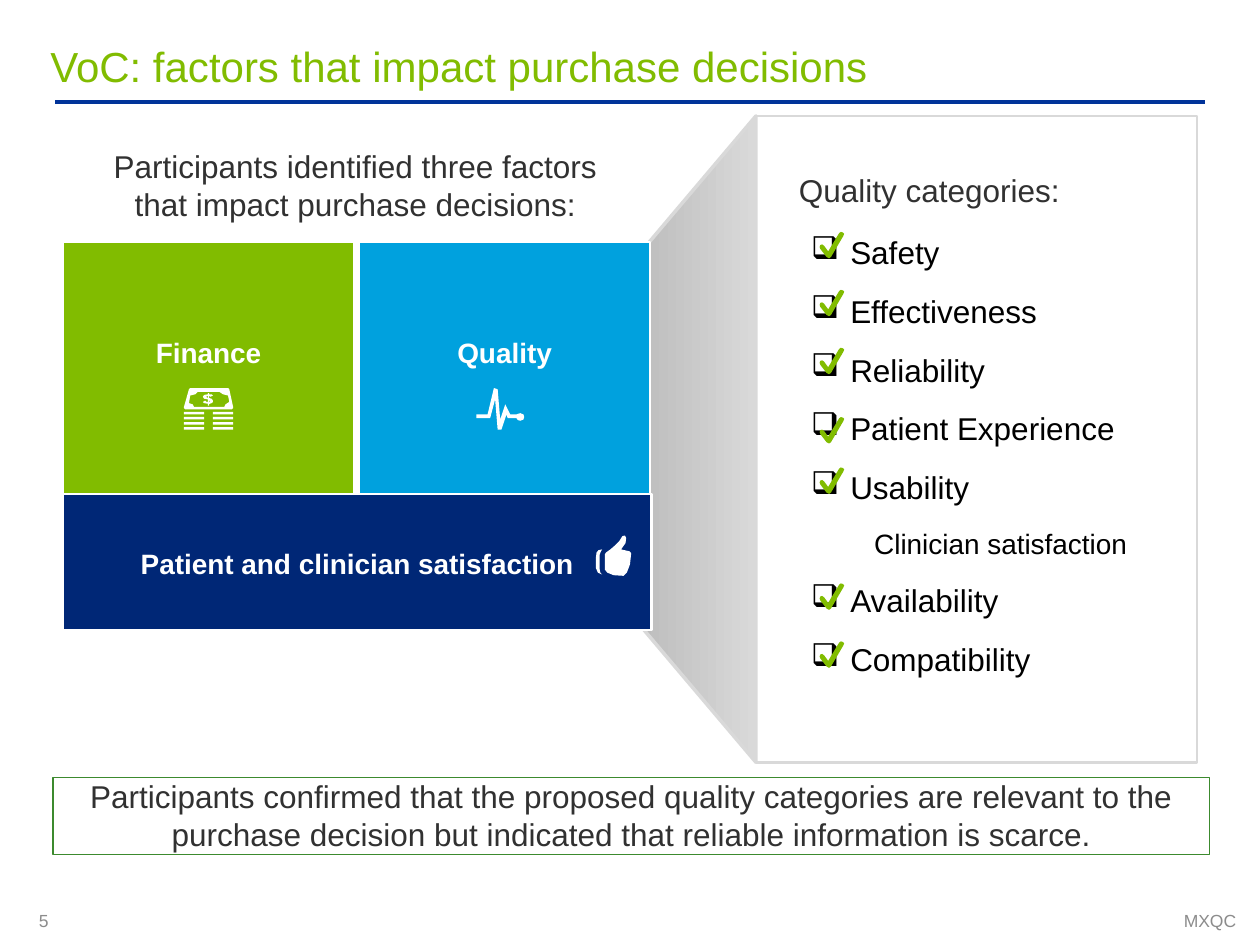
from copy import deepcopy
from lxml.etree import SubElement
from pptx import Presentation
from pptx.dml.color import RGBColor
from pptx.enum.shapes import MSO_CONNECTOR as Conn, MSO_SHAPE as Kind
from pptx.enum.text import MSO_ANCHOR as Anchor, PP_ALIGN as Align
from pptx.oxml.ns import qn
from pptx.util import Inches, Pt

HEX = {"green": "81BC00", "blue": "00A1DE", "navy": "002776", "rule": "003399",
       "frame": "3C8A2E", "text": "313131", "black": "000000", "white": "FFFFFF",
       "foot": "8C8C8C", "dark": "808080", "mid": "B7B7B7", "pale": "D9D9D9"}
RGB = {name: RGBColor.from_string(code) for name, code in HEX.items()}

deck = Presentation()
deck.slide_width, deck.slide_height = Inches(10), Inches(7.5)
slide = deck.slides.add_slide(deck.slide_layouts[6])
shapes = slide.shapes


def write(shape, lines, size, color, align=Align.LEFT, anchor=Anchor.TOP,
          inset=(0, 0, 0, 0), wrap=True):
    """Fill a shape with paragraphs that share one style."""
    frame = shape.text_frame
    frame.text = "\n".join(lines)
    frame.word_wrap = wrap
    frame.vertical_anchor = anchor
    (frame.margin_left, frame.margin_top,
     frame.margin_right, frame.margin_bottom) = map(Inches, inset)
    for para in frame.paragraphs:
        para.alignment = align
        para.font.name, para.font.size = "Arial", Pt(size)
        para.font.color.rgb = RGB[color]
    return frame.paragraphs


def draw(left, top, color, outlines):
    """Draw closed outlines, given in hundredths of an inch from left, top."""
    build = None
    for outline in outlines:
        pts = [(Inches(left + x / 100), Inches(top + y / 100)) for x, y in outline]
        if build is None:
            build = shapes.build_freeform(*pts[0])
        else:
            build.move_to(*pts[0])
        build.add_line_segments(pts[1:], close=True)
    icon = build.convert_to_shape()
    icon.shadow.inherit = False
    icon.fill.solid()
    icon.fill.fore_color.rgb = RGB[color]
    icon.line.fill.background()


# Footer and title rule
foot = shapes.add_textbox(Inches(6.83), Inches(7.22), Inches(2.98), Inches(0.17))
write(foot, ["MXQC"], 10, "foot", Align.RIGHT, Anchor.MIDDLE)
page = shapes.add_textbox(Inches(0.21), Inches(7.17), Inches(0.37), Inches(0.27))
write(page, ["5"], 10, "foot", anchor=Anchor.MIDDLE, inset=(0.1, 0.05, 0.1, 0.05), wrap=False)
rule = shapes.add_connector(Conn.STRAIGHT, Inches(0.44), Inches(0.81), Inches(9.56), Inches(0.81))
rule.line.color.rgb, rule.line.width = RGB["rule"], Pt(2.25)
SubElement(rule._element.spPr, qn("a:effectLst"))

# Grey wedge that opens towards the panel
wedge = shapes.add_shape(Kind.ISOSCELES_TRIANGLE, Inches(2.35), Inches(2.4), Inches(5.13), Inches(2.17))
wedge.rotation = 270
wedge.shadow.inherit = False
wedge.line.color.rgb, wedge.line.width = RGB["pale"], Pt(2)
wedge.fill.gradient()
wedge.fill.gradient_angle = 270
first = wedge.fill._fill._gradFill.gsLst[0]
first.addnext(deepcopy(first))
for stop, (pos, tone) in zip(wedge.fill.gradient_stops, [(0, "dark"), (0.5, "mid"), (1, "pale")]):
    stop.position = pos
    stop.color.rgb = RGB[tone]

# Title
title = shapes.add_textbox(Inches(0.4), Inches(0.32), Inches(9.2), Inches(0.68))
write(title, ["VoC: factors that impact purchase decisions"], 24, "green")

# Three factor tiles; the upper two leave room for an icon below the text
tiles = [("Finance", 0.5, 1.92, 2.31, 2.01, "green", 0.37),
         ("Quality", 2.85, 1.92, 2.31, 2.01, "blue", 0.37),
         ("Patient and clinician satisfaction", 0.5, 3.92, 4.67, 1.08, "navy", 0.1)]
for label, x, y, w, h, color, room in tiles:
    tile = shapes.add_shape(Kind.RECTANGLE, Inches(x), Inches(y), Inches(w), Inches(h))
    tile.shadow.inherit = False
    tile.fill.solid()
    tile.fill.fore_color.rgb = RGB[color]
    tile.line.color.rgb, tile.line.width = RGB["white"], Pt(1.5)
    para = write(tile, [label], 16, "white", Align.CENTER, Anchor.MIDDLE, (0.1, 0.1, 0.1, room))[0]
    para.font.bold = True
    para.line_spacing = 1.06

# Money icon: stacked notes under a bill with a dollar sign
notes = [[(x, y), (x + 16, y), (x + 16, y + 2), (x, y + 2)]
         for y in range(19, 32, 4) for x in (0, 23)]
bill = [(5, 0), (35, 0), (36, 1), (39, 15), (39, 16), (38, 17), (1, 17), (0, 16), (0, 15), (4, 1)]
field = [(11, 3), (9, 5), (5, 6), (4, 12), (7, 13), (8, 15), (32, 15), (33, 13),
         (36, 11), (35, 6), (31, 5), (28, 3)]
dollar = [(19, 4), (20, 4), (20, 5), (22, 5), (23, 6), (21, 7), (20, 6), (20, 8), (22, 8.5),
          (23, 10), (23, 11), (22, 12), (20, 12.7), (20, 14), (19, 14), (19, 12.5), (16, 12),
          (15, 11), (17, 10), (18, 11), (19, 11), (19, 9), (16, 8.5), (15, 7), (16, 5.5), (19, 5)]
gaps = [[(20, 10), (21.3, 10.5), (20, 11)], [(19, 6), (17.5, 7), (19, 8)]]
draw(1.46, 3.08, "white", notes + [bill, field, dollar] + gaps)

# Thumb icon
thumb = [(20, 12), (23.5, 7), (24, 3), (23, 1), (21, 1.5), (18.5, 5.5), (15, 9), (11.5, 12),
         (8, 14.5), (7, 16), (7, 28), (9, 30.5), (14, 32.5), (22, 33), (24.5, 30.5), (27, 24),
         (28, 15), (26.5, 13.5), (22, 12.5)]
cuff = [(5, 12), (2, 12.7), (0.5, 14.5), (0, 18), (0, 27), (1.5, 30.5), (5, 32), (3.5, 30.5),
        (3, 28), (3, 16), (4, 13.5)]
draw(4.73, 4.24, "white", [thumb, cuff])

# Pulse icon
pulse = [(35, 20), (33, 20.5), (32, 21), (27, 21), (23, 13), (19, 25), (17, 1), (14, 0), (9, 21),
         (0, 21), (0, 24), (11, 24), (15, 9), (17, 33), (20, 33), (24, 21), (25, 24), (32, 24),
         (33, 25.5), (35, 26), (37.5, 25), (38, 23), (37.5, 21)]
draw(3.78, 3.08, "white", [pulse])

# Lead-in
lead = shapes.add_textbox(Inches(0.73), Inches(1.17), Inches(4.18), Inches(0.61))
write(lead, ["Participants identified three factors that impact purchase decisions:"],
      18, "text", Align.CENTER)

# Checklist
names = ["Safety", "Effectiveness", "Reliability", "Patient Experience", "Usability",
         "Clinician satisfaction", "Availability", "Compatibility"]
items = shapes.add_textbox(Inches(6.34), Inches(1.8), Inches(3.16), Inches(3.67))
for para in write(items, names, 18, "black", inset=(0.1, 0.05, 0.1, 0.05)):
    para.space_before = Pt(12)
    props = para._p.get_or_add_pPr()
    if para.text == "Clinician satisfaction":
        para.level = 1
        para.font.size = Pt(16)
        props.set("marL", str(Inches(0.5)))
        props.set("indent", "0")
    else:
        props.set("marL", str(Inches(0.31)))
        props.set("indent", str(-Inches(0.31)))
        bullet = SubElement(props, qn("a:buChar"))
        bullet.set("char", "❑")
        props.find(qn("a:defRPr")).addprevious(bullet)

# Ticks
tick = [(8, 21), (6, 20), (1, 13.5), (0.5, 12), (1, 10.5), (2.5, 10), (4, 11), (7.3, 15.5),
        (16, 1), (17.3, 0), (19, 0.5), (20, 1.5), (19.3, 3.3), (9.5, 20)]
for top in (1.84, 2.3, 2.76, 3.31, 3.71, 4.63, 5.09):
    draw(6.5, top, "green", [tick])

# Framed conclusion and quality panel
boxes = []
for x, y, w, h, color, width in [(0.42, 6.17, 9.18, 0.61, "frame", 0.75),
                                 (6, 0.92, 3.5, 5.13, "pale", 1.5)]:
    box = shapes.add_shape(Kind.RECTANGLE, Inches(x), Inches(y), Inches(w), Inches(h))
    box.shadow.inherit = False
    box.fill.background()
    box.line.color.rgb, box.line.width = RGB[color], Pt(width)
    boxes.append(box)
write(boxes[0], ["Participants confirmed that the proposed quality categories are relevant to the "
                 "purchase decision but indicated that reliable information is scarce."],
      18, "text", Align.CENTER)
head = shapes.add_textbox(Inches(6.34), Inches(1.36), Inches(2.09), Inches(0.3))
write(head, ["Quality categories:"], 18, "text", wrap=False)

deck.save("out.pptx")
